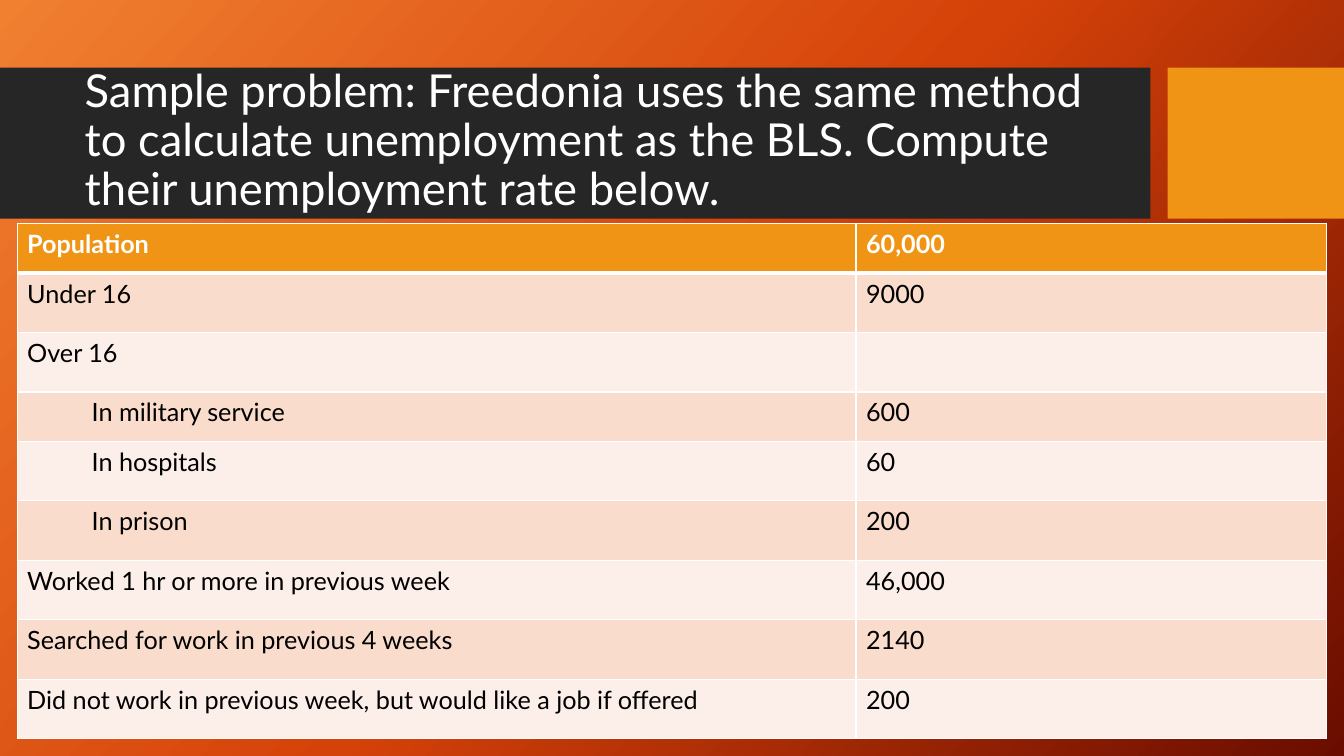
"""Build the Freedonia unemployment rate sample problem slide."""
from copy import deepcopy

from lxml import etree
from pptx import Presentation
from pptx.dml.color import RGBColor
from pptx.enum import shapes, text
from pptx.oxml.ns import qn
from pptx.util import Inches, Pt

WHITE = RGBColor(0xFF, 0xFF, 0xFF)
BLACK = RGBColor(0, 0, 0)
CHARCOAL = RGBColor(0x26, 0x26, 0x26)
AMBER = RGBColor(0xF0, 0x94, 0x15)
PEACH = RGBColor(0xF9, 0xDC, 0xCC)
PALE_PEACH = RGBColor(0xFC, 0xEE, 0xE8)
GLOW = [(0, RGBColor(0xF1, 0x80, 0x31)), (0.5, RGBColor(0xD5, 0x42, 0x09)),
        (1, RGBColor(0x6A, 0x0D, 0x00))]
FONT = "Lato"

LABOR_FIGURES = [
    ("Population", "60,000"),
    ("Under 16", "9000"),
    ("Over 16", ""),
    ("In military service", "600"),
    ("In hospitals", "60"),
    ("In prison", "200"),
    ("Worked 1 hr or more in previous week", "46,000"),
    ("Searched for work in previous 4 weeks", "2140"),
    ("Did not work in previous week, but would like a job if offered", "200"),
]
EXCLUDED_GROUPS = range(3, 6)
SHORT_ROWS = (0, 3)


def style_run(run, size, color, bold=False):
    run.font.name = FONT
    run.font.size = Pt(size)
    run.font.color.rgb = color
    run.font.bold = bold


def add_border(cell, side, points):
    line = etree.SubElement(cell._tc.get_or_add_tcPr(), qn(f"a:ln{side}"), w=str(Pt(points)))
    paint = etree.SubElement(line, qn("a:solidFill"))
    etree.SubElement(paint, qn("a:srgbClr"), val=str(WHITE))


prs = Presentation()
prs.slide_width = Inches(13.33)
prs.slide_height = Inches(7.5)
slide = prs.slides.add_slide(prs.slide_layouts[5])

backdrop = slide.background.fill
backdrop.gradient()
backdrop.gradient_angle = 360 - 42
stop_list = slide.element.find(".//" + qn("a:gsLst"))
stop_list.append(deepcopy(stop_list[-1]))
for stop, (position, color) in zip(backdrop.gradient_stops, GLOW):
    stop.position = position
    stop.color.rgb = color

for left, width, color in [(0, 11.41, CHARCOAL), (11.58, 1.75, AMBER)]:
    band = slide.shapes.add_shape(shapes.MSO_SHAPE.RECTANGLE, Inches(left), Inches(0.67),
                                  Inches(width), Inches(1.5))
    band.shadow.inherit = False
    band.fill.solid()
    band.fill.fore_color.rgb = color
    band.line.fill.background()

problem = slide.shapes.title
slide.shapes._spTree.append(problem.element)
problem.left, problem.top = Inches(0.74), Inches(0.82)
problem.width, problem.height = Inches(10.51), Inches(1.18)
problem.text_frame.word_wrap = True
problem.text_frame.auto_size = text.MSO_AUTO_SIZE.NONE
problem.text_frame.vertical_anchor = text.MSO_ANCHOR.MIDDLE
question = problem.text_frame.paragraphs[0]
question.alignment = text.PP_ALIGN.LEFT
question.line_spacing = 0.9
wording = question.add_run()
wording.text = ("Sample problem: Freedonia uses the same method to calculate unemployment "
                "as the BLS. Compute their unemployment rate below.")
style_run(wording, 32.4, WHITE)

figures = slide.shapes.add_table(len(LABOR_FIGURES), 2, Inches(0.17), Inches(2.22),
                                 Inches(12.98), Inches(5.11)).table
for column, width in zip(figures.columns, (8.32, 4.67)):
    column.width = Inches(width)

for row, entries in enumerate(LABOR_FIGURES):
    figures.rows[row].height = Inches(0.49 if row in SHORT_ROWS else 0.59)
    header = row == 0
    row_fill = AMBER if header else PEACH if row % 2 else PALE_PEACH
    for column, entry in enumerate(entries):
        cell = figures.cell(row, column)
        for side in "LRTB":
            below_header = (row, side) in ((0, "B"), (1, "T"))
            add_border(cell, side, 3 if below_header else 1)
        cell.fill.solid()
        cell.fill.fore_color.rgb = row_fill
        if column == 0 and row in EXCLUDED_GROUPS:
            cell.margin_left = Inches(0.74)
        if entry:
            run = cell.text_frame.paragraphs[0].add_run()
            run.text = entry
            style_run(run, 18, WHITE if header else BLACK, header)

prs.save("out.pptx")
